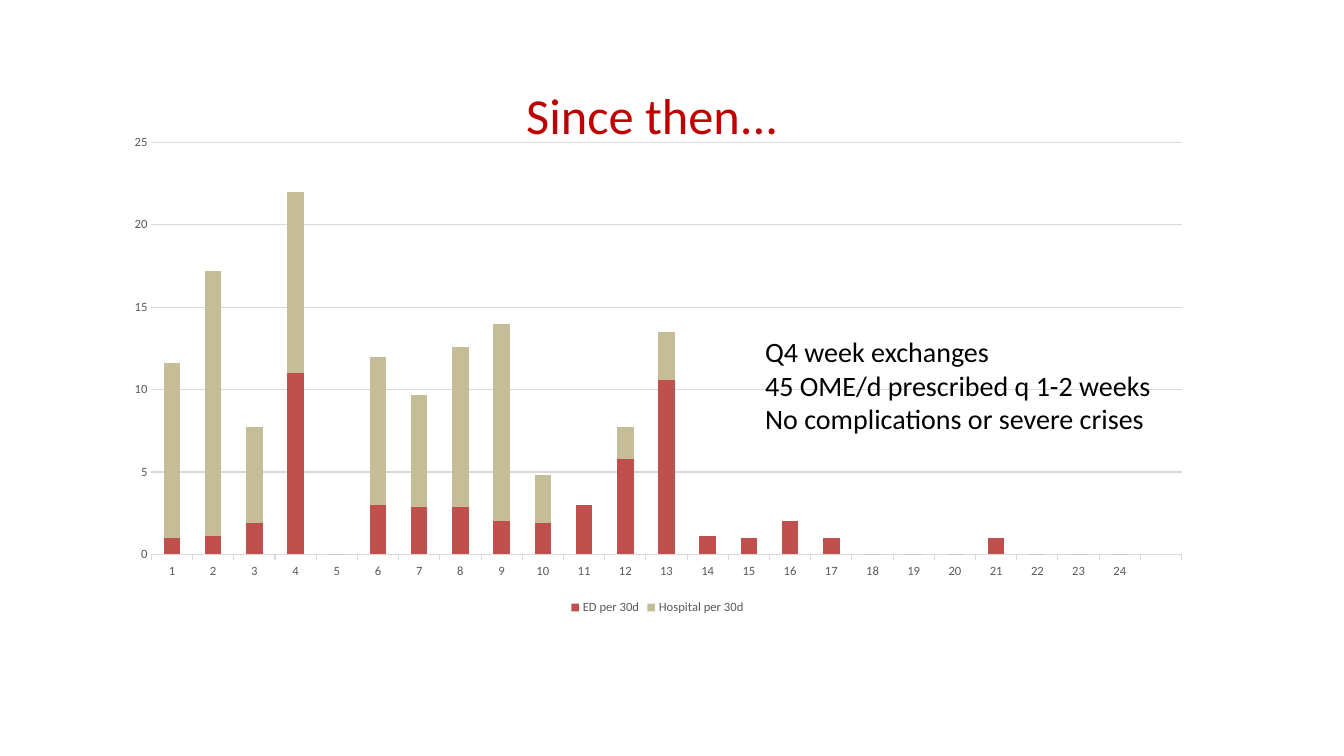
from pptx import Presentation
from pptx.chart.data import CategoryChartData
from pptx.dml.color import RGBColor
from pptx.enum.chart import XL_CHART_TYPE as ChartType, XL_LEGEND_POSITION as LegendPosition
from pptx.enum.chart import XL_TICK_MARK as TickMark
from pptx.enum.text import MSO_AUTO_SIZE as AutoSize
from pptx.oxml import parse_xml
from pptx.oxml.ns import nsdecls, qn
from pptx.util import Inches, Pt

# Content
TITLE = "Since then..."
CATEGORIES = [str(month) for month in range(1, 25)] + [""]
SERIES = [
    ("ED per 30d", "C0504D",
     [1, 1.1, 1.9, 11, 0, 3, 2.9, 2.9, 2, 1.9, 3, 5.8, 10.6,
      1.1, 1, 2, 1, 0, 0, 0, 1, 0, 0, 0, None]),
    ("Hospital per 30d", "C4BD97",
     [10.6, 16.1, 5.8, 11, 0, 9, 6.8, 9.7, 12, 2.9, 0, 1.9, 2.9,
      0, 0, 0, 0, 0, 0, 0, 0, 0, 0, 0, None]),
]
NOTES = [
    "Q4 week exchanges",
    "45 OME/d prescribed q 1-2 weeks",
    "No complications or severe crises",
]
FONT = "Calibri"
GRAY_TEXT, GRAY_LINE = "595959", "D9D9D9"


def color(hex_string):
    return RGBColor.from_string(hex_string)


def set_font(font, size, hex_string):
    font.name = FONT
    font.size = Pt(size)
    font.bold = False
    font.color.rgb = color(hex_string)


def set_line(line):
    line.color.rgb = color(GRAY_LINE)
    line.width = Pt(0.75)


def set_layout(element, index, target="", **fractions):
    """Place a chart part by fractions of the chart's size."""
    for old_layout in element.findall(qn("c:layout")):
        element.remove(old_layout)
    inner = f'<c:layoutTarget val="{target}"/>' if target else ""
    modes = "".join(f'<c:{key}Mode val="edge"/>' for key in "xy")
    places = "".join(f'<c:{key} val="{value}"/>' for key, value in fractions.items())
    element.insert(index, parse_xml(
        f'<c:layout {nsdecls("c")}><c:manualLayout>{inner}{modes}{places}'
        "</c:manualLayout></c:layout>"))


presentation = Presentation()
presentation.slide_width = Inches(13.33)
presentation.slide_height = Inches(7.5)
slide = presentation.slides.add_slide(presentation.slide_layouts[6])

# Stacked column chart
chart_data = CategoryChartData()
chart_data.categories = CATEGORIES
for name, _, values in SERIES:
    chart_data.add_series(name, values)
chart = slide.shapes.add_chart(
    ChartType.COLUMN_STACKED, Inches(1.17), Inches(0.59),
    Inches(10.7), Inches(5.55), chart_data).chart
set_font(chart.font, 10, "000000")
plot = chart.plots[0]
plot.gap_width = 150
plot.overlap = 100
plot.vary_by_categories = False
for series, (_, fill, _) in zip(plot.series, SERIES):
    series.format.fill.solid()
    series.format.fill.fore_color.rgb = color(fill)
    series.invert_if_negative = False

# Chart title
chart.has_title = True
title_paragraph = chart.chart_title.text_frame.paragraphs[0]
title_paragraph.text = TITLE
set_font(title_paragraph.font, 36, "C00000")
set_layout(chart.chart_title._element, 1, x=0.37, y=0.02)
set_layout(chart._chartSpace.chart.plotArea, 0, "inner", x=0.031, y=0.148, w=0.955, h=0.737)

# Axes and legend
category_axis, value_axis = chart.category_axis, chart.value_axis
for axis in (category_axis, value_axis):
    axis.minor_tick_mark = TickMark.NONE
    set_font(axis.tick_labels.font, 9, GRAY_TEXT)
category_axis.major_tick_mark = TickMark.OUTSIDE
set_line(category_axis.format.line)
value_axis.major_tick_mark = TickMark.NONE
value_axis.format.line.fill.background()
value_axis.minimum_scale, value_axis.maximum_scale, value_axis.major_unit = 0, 25, 5
set_line(value_axis.major_gridlines.format.line)
chart.has_legend = True
chart.legend.position = LegendPosition.BOTTOM
chart.legend.include_in_layout = False
set_font(chart.legend.font, 9, GRAY_TEXT)

# Notes over the chart
notes_frame = slide.shapes.add_textbox(
    Inches(7.49), Inches(3.27), Inches(4.06), Inches(1.51)).text_frame
notes_frame.word_wrap = False
notes_frame.auto_size = AutoSize.NONE
notes_frame.text = "\n".join(NOTES)
for paragraph in notes_frame.paragraphs:
    set_font(paragraph.font, 20, "000000")

presentation.save("out.pptx")
